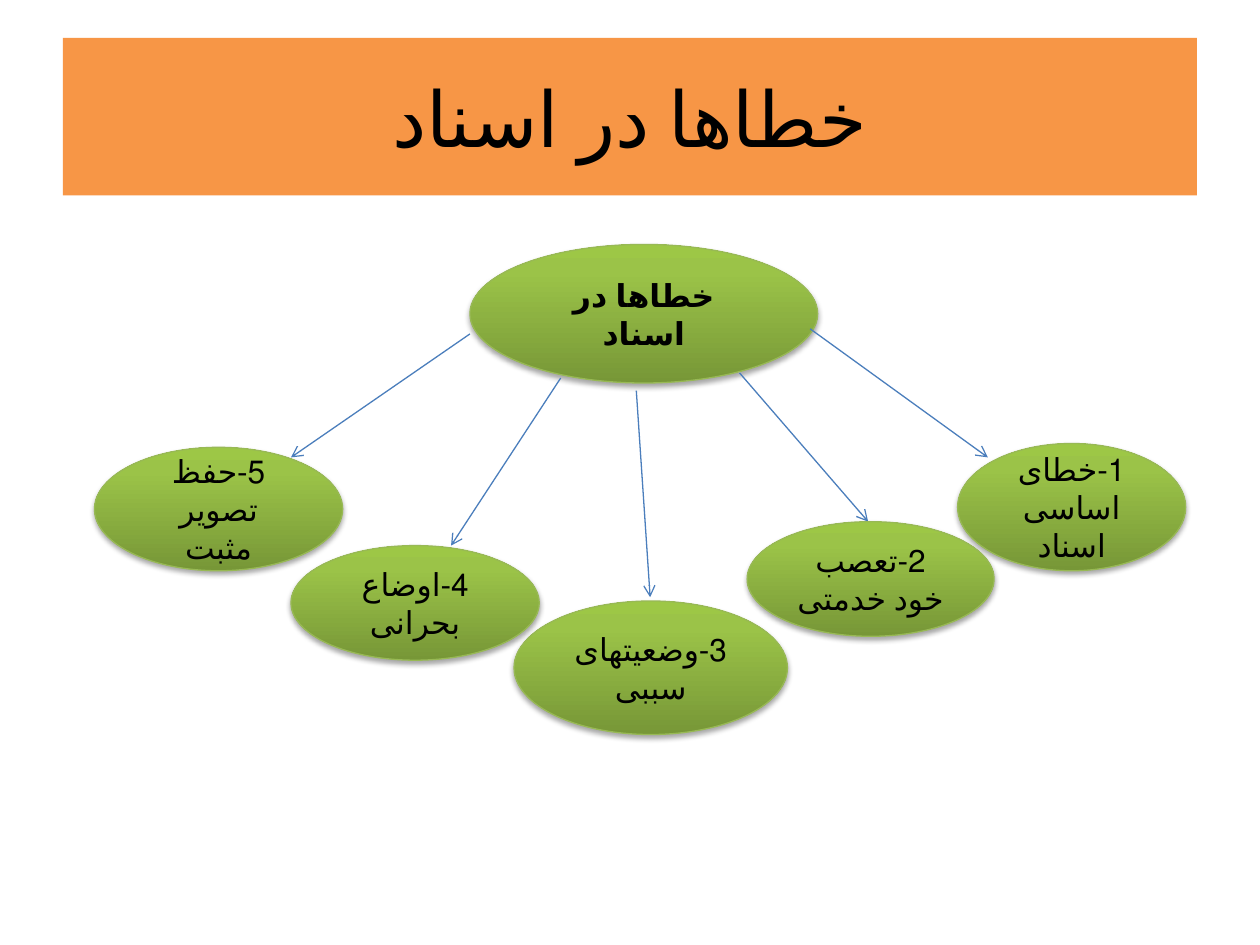
from lxml.etree import SubElement
from pptx import Presentation
from pptx.dml.color import RGBColor
from pptx.enum.lang import MSO_LANGUAGE_ID as LANG
from pptx.enum.shapes import MSO_CONNECTOR as CONN, MSO_SHAPE as SHAPE
from pptx.enum.text import MSO_ANCHOR as ANCHOR, PP_ALIGN as ALIGN
from pptx.oxml.ns import qn
from pptx.util import Inches, Pt

FONT = "Calibri"
TITLE = "خطاها در اسناد"
ROOT = (3.73, 1.94, 2.76, 1.1)
ERRORS = [
    ("1-خطای اساسی اسناد", (7.6, 3.52, 1.81, 1.01), (6.43, 2.61, 7.84, 3.63)),
    ("2-تعصب خود خدمتی", (5.93, 4.14, 1.96, 0.91), (5.87, 2.96, 6.89, 4.14)),
    ("3-وضعیتهای سببی", (4.08, 4.77, 2.17, 1.06), (5.05, 3.1, 5.16, 4.74)),
    ("4-اوضاع بحرانی", (2.31, 4.33, 1.97, 0.91), (4.45, 3, 3.58, 4.33)),
    ("5-حفظ تصویر مثبت", (0.75, 3.55, 1.97, 0.98), (3.73, 2.65, 2.31, 3.63)),
]
GREENS = [(0, "779737"), (80, "9BC348"), (100, "9DC746")]


def rgb(value):
    """Turn a hex string into a colour."""
    return RGBColor.from_string(value)


def add_node(slide, kind, box, text, size, bold=False):
    """Add a shape with centred right-to-left text."""
    sp = slide.shapes.add_shape(kind, *map(Inches, box))
    sp.shadow.inherit = False
    tf = sp.text_frame
    tf.word_wrap = True
    tf.vertical_anchor = ANCHOR.MIDDLE
    tf.text = text
    p = tf.paragraphs[0]
    p.alignment = ALIGN.CENTER
    p._p.get_or_add_pPr().set("rtl", "1")
    font = p.runs[0].font
    font.name, font.size, font.bold = FONT, Pt(size), bold
    font.language_id = LANG.FARSI
    font.color.rgb = rgb("000000")
    return sp


def add_title(slide, text):
    """Add the orange title band."""
    sp = add_node(slide, SHAPE.RECTANGLE, (0.5, 0.3, 9, 1.25), text, 44)
    sp.fill.solid()
    sp.fill.fore_color.rgb = rgb("F79646")
    sp.line.fill.background()


def add_ellipse(slide, box, text, bold=False):
    """Add a green gradient ellipse with a soft shadow."""
    sp = add_node(slide, SHAPE.OVAL, box, text, 18, bold)
    sp.line.color.rgb = rgb("98B955")
    sp.line.width = Pt(0.75)
    sp.fill.gradient()
    sp.fill.gradient_angle = 90
    spPr = sp._element.spPr
    stops = spPr.find(qn("a:gradFill")).find(qn("a:gsLst"))
    for stop in list(stops):
        stops.remove(stop)
    for pos, color in GREENS:
        stop = SubElement(stops, qn("a:gs"), pos=str(pos * 1000))
        SubElement(stop, qn("a:srgbClr"), val=color)
    shadow = SubElement(spPr.find(qn("a:effectLst")), qn("a:outerShdw"),
                        blurRad=str(Pt(3.1)), dist=str(Pt(1.8)),
                        dir="5400000", rotWithShape="0")
    black = SubElement(shadow, qn("a:srgbClr"), val="000000")
    SubElement(black, qn("a:alpha"), val="35000")


def add_arrow(slide, ends):
    """Add a thin blue line with an open arrowhead at its end."""
    line = slide.shapes.add_connector(CONN.STRAIGHT, *map(Inches, ends))
    line.line.color.rgb = rgb("4B7EBC")
    line.line.width = Pt(0.75)
    SubElement(line.line._get_or_add_ln(), qn("a:tailEnd"), type="arrow")
    SubElement(line._element.spPr, qn("a:effectLst"))


def main():
    """Build the slide and save it."""
    prs = Presentation()
    prs.slide_width, prs.slide_height = Inches(10), Inches(7.5)
    slide = prs.slides.add_slide(prs.slide_layouts[6])
    add_title(slide, TITLE)
    add_ellipse(slide, ROOT, TITLE, bold=True)
    for text, box, ends in ERRORS:
        add_arrow(slide, ends)
        add_ellipse(slide, box, text)
    prs.save("out.pptx")


if __name__ == "__main__":
    main()
